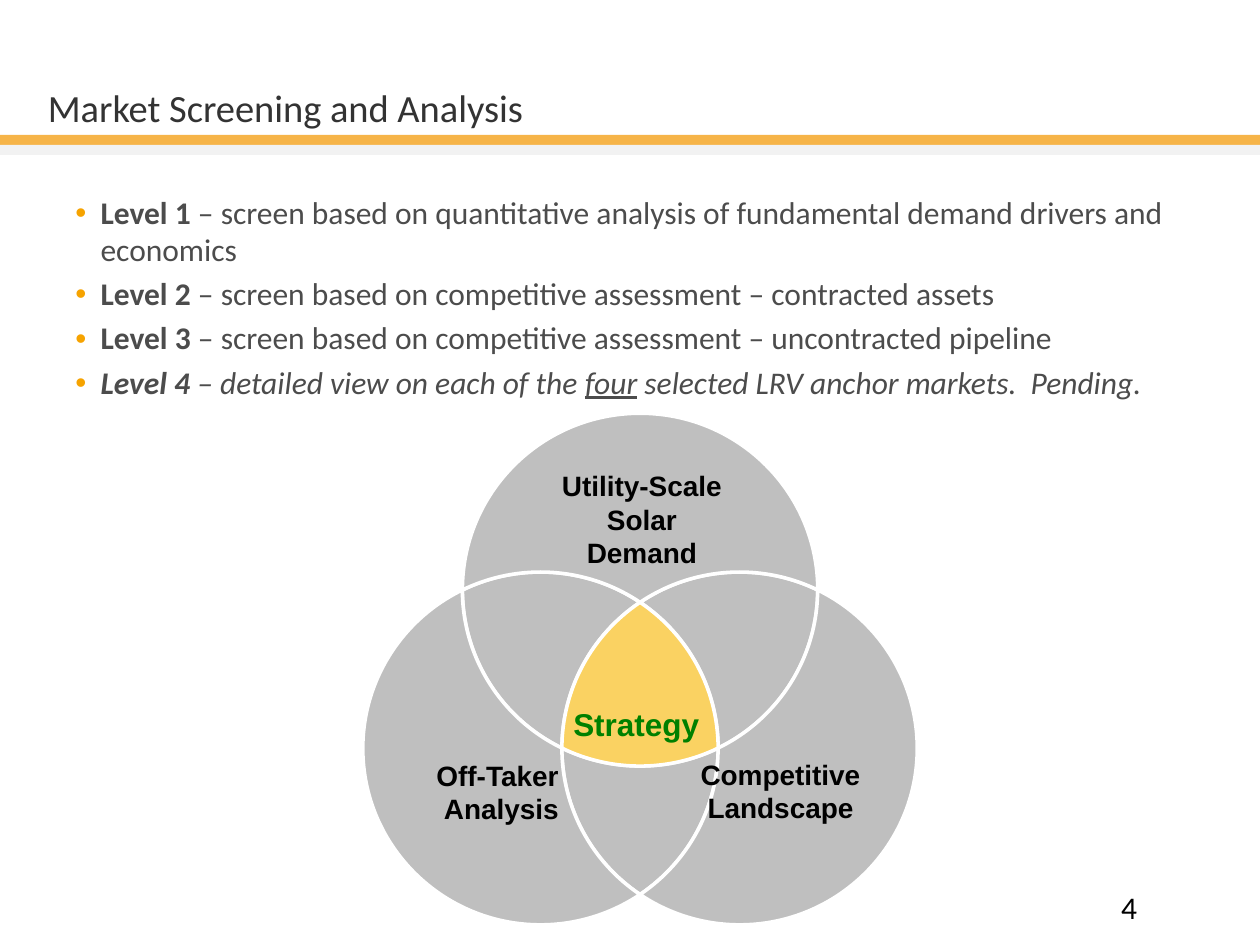
from math import atan2, ceil, cos, floor, hypot, pi, sin, sqrt, tan

from lxml.etree import SubElement
from pptx import Presentation
from pptx.dml.color import RGBColor
from pptx.enum.shapes import MSO_SHAPE
from pptx.enum.text import MSO_ANCHOR, PP_ALIGN
from pptx.oxml.ns import qn
from pptx.util import Inches, Pt

THEME = {
    "orange": "F6B448", "pale": "F2F2F2", "title": "333333", "body": "4C4C4C",
    "bullet": "F6A300", "circle": "BFBFBF", "core": "FAD262", "edge": "FFFFFF",
    "label": "000000", "strategy": "008000",
    "title_size": 22, "body_size": 18, "label_size": 16,
    "text_font": "Calibri", "label_font": "Arial",
}

TITLE = "Market Screening and Analysis"
PAGE_NUMBER = "4"
# Each level is a list of runs: text, style letters (b, i, u)
LEVELS = [
    [("Level 1", "b"),
     (" – screen based on quantitative analysis of fundamental demand drivers and economics", "")],
    [("Level 2 ", "b"),
     ("– screen based on competitive assessment – contracted assets", "")],
    [("Level 3 ", "b"),
     ("– screen based on competitive assessment – uncontracted pipeline", "")],
    [("Level 4 ", "bi"), ("– detailed view on each of the ", "i"), ("four", "iu"),
     (" selected LRV anchor markets.  Pending.", "i")],
]
BANDS = [(1.07, "orange"), (1.15, "pale")]
# Label paragraphs, box (left, top, width, height), colour, size
LABELS = [
    (["Utility-Scale Solar Demand"], (4.28, 3.67, 1.63, 0.91), "label", "label_size"),
    (["Off-Taker ", "Analysis"], (2.95, 5.97, 2.06, 0.57), "label", "label_size"),
    (["Competitive Landscape"], (5.36, 5.96, 1.67, 0.6), "label", "label_size"),
    (["Strategy"], (4, 5.55, 2.1, 0.4), "strategy", "body_size"),
]

# Circle centres in clockwise order: demand, competition, off-takers
CENTRES = [(5.08, 4.68), (5.87, 5.94), (4.29, 5.94)]
RADIUS_X, RADIUS_Y = 1.41, 1.4


def color(key):
    return RGBColor.from_string(THEME[key])


def add_run(paragraph, text, ink, size, font, style=""):
    run = paragraph.add_run()
    run.text = text
    run.font.name = THEME[font]
    run.font.size = Pt(THEME[size])
    run.font.color.rgb = color(ink)
    run.font.bold = "b" in style
    run.font.italic = "i" in style
    if "u" in style:
        run.font.underline = True


def add_text_frame(slide, box):
    frame = slide.shapes.add_textbox(*map(Inches, box)).text_frame
    frame.word_wrap = True
    return frame


def next_paragraph(frame, index):
    return frame.add_paragraph() if index else frame.paragraphs[0]


def add_bullet(paragraph):
    properties = paragraph._p.get_or_add_pPr()
    properties.set("marL", str(Inches(0.2)))
    properties.set("indent", str(Inches(-0.2)))
    bullet_color = SubElement(properties, qn("a:buClr"))
    SubElement(bullet_color, qn("a:srgbClr")).set("val", THEME["bullet"])
    SubElement(properties, qn("a:buFont")).set("typeface", "Arial")
    SubElement(properties, qn("a:buChar")).set("char", "•")


UNIT_CENTRES = [(x / RADIUS_X, y / RADIUS_Y) for x, y in CENTRES]
MIDDLE = [sum(axis) / 3 for axis in zip(*UNIT_CENTRES)]


def crossings(a, b):
    """Inner and outer crossing of two circles, in units of the radius."""
    (ax, ay), (bx, by) = UNIT_CENTRES[a], UNIT_CENTRES[b]
    distance = hypot(bx - ax, by - ay)
    reach = sqrt(1 - distance ** 2 / 4) / distance
    points = [((ax + bx) / 2 - side * reach * (by - ay),
               (ay + by) / 2 + side * reach * (bx - ax)) for side in (1, -1)]
    return sorted(points, key=lambda p: hypot(p[0] - MIDDLE[0], p[1] - MIDDLE[1]))


def inner(a, b):
    return crossings(a, b)[0]


def outer(a, b):
    return crossings(a, b)[1]


def arc(circle, start, end, turn):
    """Bezier points of an arc, cut at the quadrants so that they stay inside
    its bounds; turn is 1 for clockwise and -1 for the reverse."""
    cx, cy = UNIT_CENTRES[circle]
    first = atan2(start[1] - cy, start[0] - cx)
    sweep = (turn * (atan2(end[1] - cy, end[0] - cx) - first)) % (2 * pi)
    last = first + turn * sweep
    low, high = sorted((first, last))
    quadrants = [q * pi / 2 for q in range(ceil(low / (pi / 2)), floor(high / (pi / 2)) + 1)]
    cuts = [first] + quadrants[::turn] + [last]
    points = [start]
    for a, b in zip(cuts, cuts[1:]):
        pull = 4 / 3 * tan((b - a) / 4)
        points += [(cx + cos(a) - pull * sin(a), cy + sin(a) + pull * cos(a)),
                   (cx + cos(b) + pull * sin(b), cy + sin(b) - pull * cos(b)),
                   (cx + cos(b), cy + sin(b))]
    return points


def outline(*arcs):
    points = arcs[0][:1] + [point for each in arcs for point in each[1:]]
    return [(x * RADIUS_X, y * RADIUS_Y) for x, y in points]


def neighbours(circle):
    return (circle - 1) % 3, (circle + 1) % 3


def overlap(circle):
    """Area shared by a circle and the next one only."""
    before, after = neighbours(circle)
    return outline(arc(circle, outer(circle, after), inner(before, circle), 1),
                   arc(before, inner(before, circle), inner(after, before), -1),
                   arc(after, inner(after, before), outer(circle, after), 1))


def petal(circle):
    """Area that belongs to one circle only."""
    before, after = neighbours(circle)
    return outline(arc(circle, outer(before, circle), outer(circle, after), 1),
                   arc(after, outer(circle, after), inner(before, after), -1),
                   arc(before, inner(before, after), outer(before, circle), -1))


def core():
    """Area shared by all three circles."""
    return outline(*(arc(c, inner(c - 1, c), inner(c, c - 2), 1) for c in (2, 0, 1)))


def add_region(slide, points, fill):
    corners = [(Inches(x), Inches(y)) for x, y in points]
    builder = slide.shapes.build_freeform(*corners[0], scale=1.0)
    builder.add_line_segments(corners[1:], close=True)
    region = builder.convert_to_shape()
    lines = list(region._element.iter(qn("a:lnTo")))[:len(corners) - 1]
    for index in range(0, len(lines), 3):
        curve = lines[index]
        curve.tag = qn("a:cubicBezTo")
        for follower in lines[index + 1:index + 3]:
            curve.append(follower[0])
            follower.getparent().remove(follower)
    region.shadow.inherit = False
    region.fill.solid()
    region.fill.fore_color.rgb = color(fill)
    region.line.color.rgb = color("edge")
    region.line.width = Pt(2)


def main():
    deck = Presentation()
    deck.slide_width, deck.slide_height = Inches(10), Inches(7.5)
    slide = deck.slides.add_slide(deck.slide_layouts[5])

    for top, fill in BANDS:
        band = slide.shapes.add_shape(
            MSO_SHAPE.RECTANGLE, 0, Inches(top), deck.slide_width, Inches(0.08))
        band.shadow.inherit = False
        band.fill.solid()
        band.fill.fore_color.rgb = color(fill)
        band.line.fill.background()

    title = slide.shapes.title
    title.left, title.top, title.width, title.height = map(Inches, (0.28, 0.13, 8.64, 0.95))
    title.text_frame.vertical_anchor = MSO_ANCHOR.BOTTOM
    heading = title.text_frame.paragraphs[0]
    heading.alignment = PP_ALIGN.LEFT
    add_run(heading, TITLE, "title", "title_size", "text_font")

    levels_frame = add_text_frame(slide, (0.5, 1.5, 9, 4.93))
    for index, runs in enumerate(LEVELS):
        level = next_paragraph(levels_frame, index)
        add_bullet(level)
        level.line_spacing = 0.97
        level.space_before = Pt(4.4 if index else 0)
        for text, style in runs:
            add_run(level, text, "body", "body_size", "text_font", style)

    number_frame = add_text_frame(slide, (8.8, 7, 1.16, 0.27))
    add_run(number_frame.paragraphs[0], PAGE_NUMBER, "label", "body_size", "text_font")

    for shape_region in (overlap, petal):
        for circle in range(3):
            add_region(slide, shape_region(circle), "circle")
    add_region(slide, core(), "core")

    for lines, box, ink, size in LABELS:
        label_frame = add_text_frame(slide, box)
        for index, line in enumerate(lines):
            label = next_paragraph(label_frame, index)
            label.alignment = PP_ALIGN.CENTER
            add_run(label, line, ink, size, "label_font", "b")

    deck.save("out.pptx")


if __name__ == "__main__":
    main()
